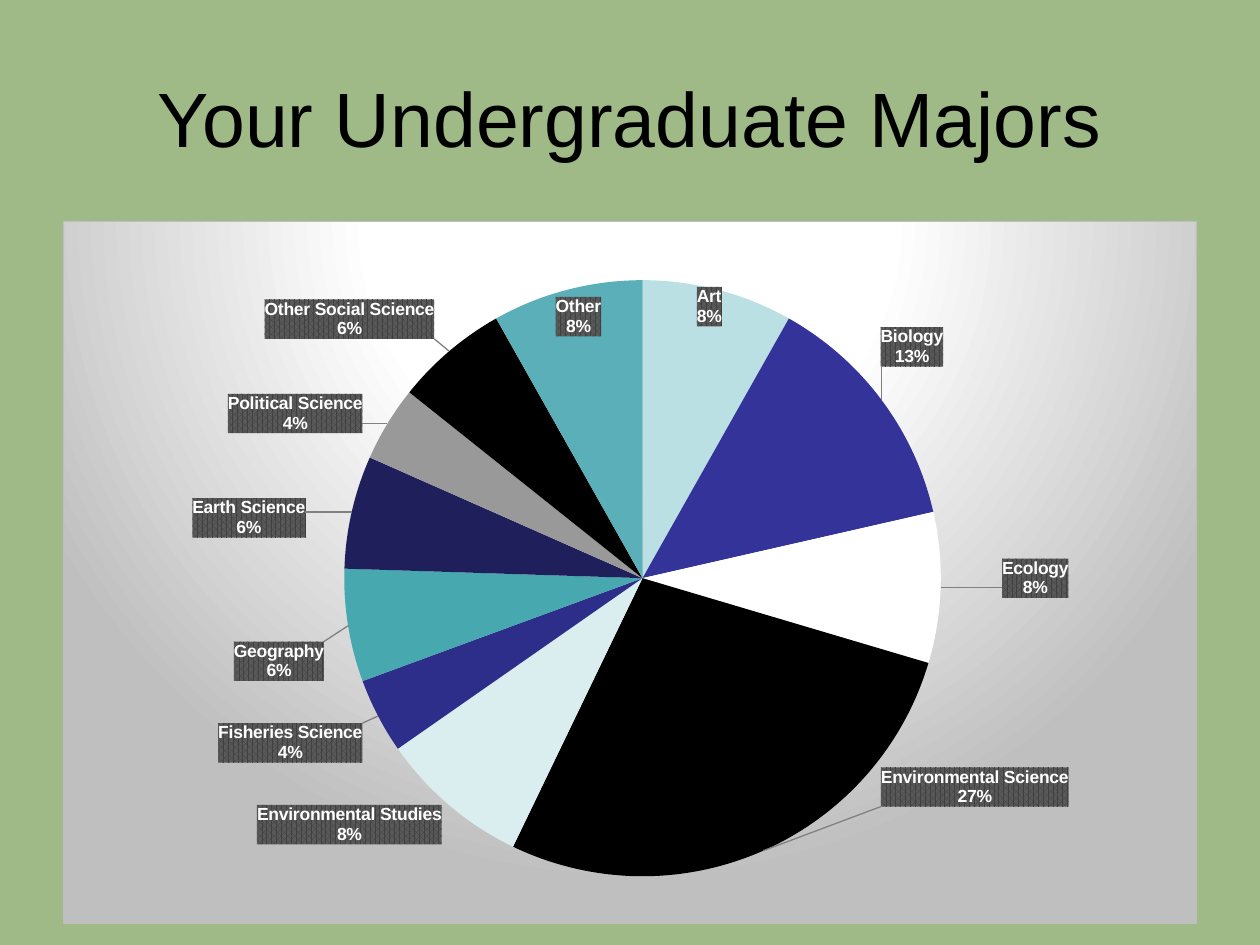
from math import cos, pi, sin
from typing import NamedTuple

from pptx import Presentation
from pptx.chart.chart import Chart
from pptx.chart.data import CategoryChartData
from pptx.dml.color import RGBColor
from pptx.enum.chart import XL_CHART_TYPE as ChartType
from pptx.enum.text import MSO_ANCHOR as Anchor, PP_ALIGN as Align
from pptx.oxml import parse_xml
from pptx.oxml.ns import nsdecls
from pptx.slide import Slide
from pptx.util import Inches, Pt

FONT = "Arial"
COLORS = {
    "background": "9FBA87",
    "text": "000000",
    "label text": "FFFFFF",
    "label front": "404040",
    "label back": "595959",
    "leader": "808080",
    "panel light": "FFFFFF",
    "panel dark": "BFBFBF",
}
CHART_LEFT, CHART_TOP, CHART_WIDTH, CHART_HEIGHT = 0.5, 1.75, 9, 5.58
PIE_X, PIE_Y, PIE_RADIUS = 5.1, 4.59, 2.37
NAMESPACES = nsdecls("c", "a")


class Major(NamedTuple):
    name: str
    percent: int
    color: str
    label_x: float
    label_y: float


MAJORS = [
    Major("Art", 8, "BBE0E3", 5.63, 2.43),
    Major("Biology", 13, "333399", 7.24, 2.75),
    Major("Ecology", 8, "FFFFFF", 8.22, 4.59),
    Major("Environmental Science", 27, "000000", 7.74, 6.25),
    Major("Environmental Studies", 8, "DAEDEF", 2.77, 6.55),
    Major("Fisheries Science", 4, "2D2D8A", 2.3, 5.9),
    Major("Geography", 6, "48A8B0", 2.21, 5.25),
    Major("Earth Science", 6, "1F1F5C", 1.97, 4.11),
    Major("Political Science", 4, "999999", 2.34, 3.28),
    Major("Other Social Science", 6, "000000", 2.77, 2.53),
    Major("Other", 8, "5AAFB8", 4.59, 2.51),
]


def color(name: str) -> RGBColor:
    return RGBColor.from_string(COLORS[name])


def solid(name: str) -> str:
    return f'<a:solidFill><a:srgbClr val="{COLORS[name]}"/></a:solidFill>'


def add_title(slide: Slide, text: str) -> None:
    shape = slide.shapes.add_textbox(Inches(0.5), Inches(0.3), Inches(9), Inches(1.25))
    frame = shape.text_frame
    frame.word_wrap = True
    frame.vertical_anchor = Anchor.MIDDLE
    paragraph = frame.paragraphs[0]
    paragraph.alignment = Align.CENTER
    run = paragraph.add_run()
    run.text = text
    run.font.name = FONT
    run.font.size = Pt(44)
    run.font.color.rgb = color("text")


def label_format() -> str:
    return f"""<c:numFmt formatCode="0&quot;%&quot;" sourceLinked="0"/>
<c:spPr><a:pattFill prst="pct75">
<a:fgClr><a:srgbClr val="{COLORS['label front']}"/></a:fgClr>
<a:bgClr><a:srgbClr val="{COLORS['label back']}"/></a:bgClr>
</a:pattFill><a:ln><a:noFill/></a:ln></c:spPr>
<c:txPr><a:bodyPr/><a:p><a:pPr><a:defRPr sz="1000" b="1">{solid("label text")}
<a:latin typeface="{FONT}"/></a:defRPr></a:pPr><a:endParaRPr lang="en-US"/></a:p></c:txPr>
<c:dLblPos val="ctr"/><c:showLegendKey val="0"/><c:showVal val="1"/>
<c:showCatName val="1"/><c:showSerName val="0"/><c:showPercent val="0"/>
<c:showBubbleSize val="0"/><c:separator>\n</c:separator>"""


def point_labels() -> str:
    total = sum(major.percent for major in MAJORS)
    passed = 0
    labels = []
    for index, major in enumerate(MAJORS):
        angle = 2 * pi * (passed + major.percent / 2) / total
        passed += major.percent
        shift_x = (major.label_x - PIE_X - PIE_RADIUS / 2 * sin(angle)) / CHART_WIDTH
        shift_y = (major.label_y - PIE_Y + PIE_RADIUS / 2 * cos(angle)) / CHART_HEIGHT
        labels.append(
            f'<c:dLbl><c:idx val="{index}"/><c:layout><c:manualLayout>'
            f'<c:x val="{shift_x:.4f}"/><c:y val="{shift_y:.4f}"/>'
            f"</c:manualLayout></c:layout>{label_format()}</c:dLbl>"
        )
    return "".join(labels)


def set_labels(chart: Chart) -> None:
    chart.plots[0].series[0].data_labels.show_value = True
    labels = chart.element.find(".//{*}ser/{*}dLbls")
    labels.getparent().replace(labels, parse_xml(
        f"<c:dLbls {NAMESPACES}>{point_labels()}{label_format()}"
        f'<c:showLeaderLines val="1"/><c:leaderLines><c:spPr><a:ln w="9525">'
        f'{solid("leader")}</a:ln></c:spPr></c:leaderLines></c:dLbls>'
    ))


def set_plot_area(chart: Chart) -> None:
    area = chart.element.find(".//{*}plotArea")
    for layout in area.findall("{*}layout"):
        area.remove(layout)
    left = (PIE_X - PIE_RADIUS - CHART_LEFT) / CHART_WIDTH
    top = (PIE_Y - PIE_RADIUS - CHART_TOP) / CHART_HEIGHT
    area.insert(0, parse_xml(f"""<c:layout {NAMESPACES}><c:manualLayout>
<c:layoutTarget val="inner"/><c:xMode val="edge"/><c:yMode val="edge"/>
<c:x val="{left:.4f}"/><c:y val="{top:.4f}"/>
<c:w val="{2 * PIE_RADIUS / CHART_WIDTH:.4f}"/>
<c:h val="{2 * PIE_RADIUS / CHART_HEIGHT:.4f}"/>
</c:manualLayout></c:layout>"""))


def set_panel(chart: Chart) -> None:
    stops = [(0, "panel light"), (39, "panel light"), (100, "panel dark")]
    gradient = "".join(
        f'<a:gs pos="{place * 1000}"><a:srgbClr val="{COLORS[name]}"/></a:gs>'
        for place, name in stops
    )
    chart.element.find("{*}chart").addnext(parse_xml(f"""<c:spPr {NAMESPACES}>
<a:gradFill><a:gsLst>{gradient}</a:gsLst><a:path path="circle">
<a:fillToRect l="50000" t="-80000" r="50000" b="180000"/></a:path></a:gradFill>
<a:ln w="9525">{solid("panel dark")}</a:ln></c:spPr>"""))


def add_majors_chart(slide: Slide) -> None:
    data = CategoryChartData()
    data.categories = [major.name for major in MAJORS]
    data.add_series("Series 1", [major.percent for major in MAJORS])
    chart = slide.shapes.add_chart(
        ChartType.PIE, Inches(CHART_LEFT), Inches(CHART_TOP),
        Inches(CHART_WIDTH), Inches(CHART_HEIGHT), data,
    ).chart
    chart.has_title = False
    chart.has_legend = False
    chart.font.name = FONT
    chart.font.size = Pt(10)
    chart.font.color.rgb = color("text")
    plot = chart.plots[0]
    plot.vary_by_categories = True
    for index, major in enumerate(MAJORS):
        point = plot.series[0].points[index]
        point.format.fill.solid()
        point.format.fill.fore_color.rgb = RGBColor.from_string(major.color)
        point.format.line.fill.background()
    set_labels(chart)
    set_plot_area(chart)
    set_panel(chart)


def main() -> None:
    presentation = Presentation()
    presentation.slide_width = Inches(10)
    presentation.slide_height = Inches(7.5)
    slide = presentation.slides.add_slide(presentation.slide_layouts[6])
    slide.background.fill.solid()
    slide.background.fill.fore_color.rgb = color("background")
    add_title(slide, "Your Undergraduate Majors")
    add_majors_chart(slide)
    presentation.save("out.pptx")


if __name__ == "__main__":
    main()
